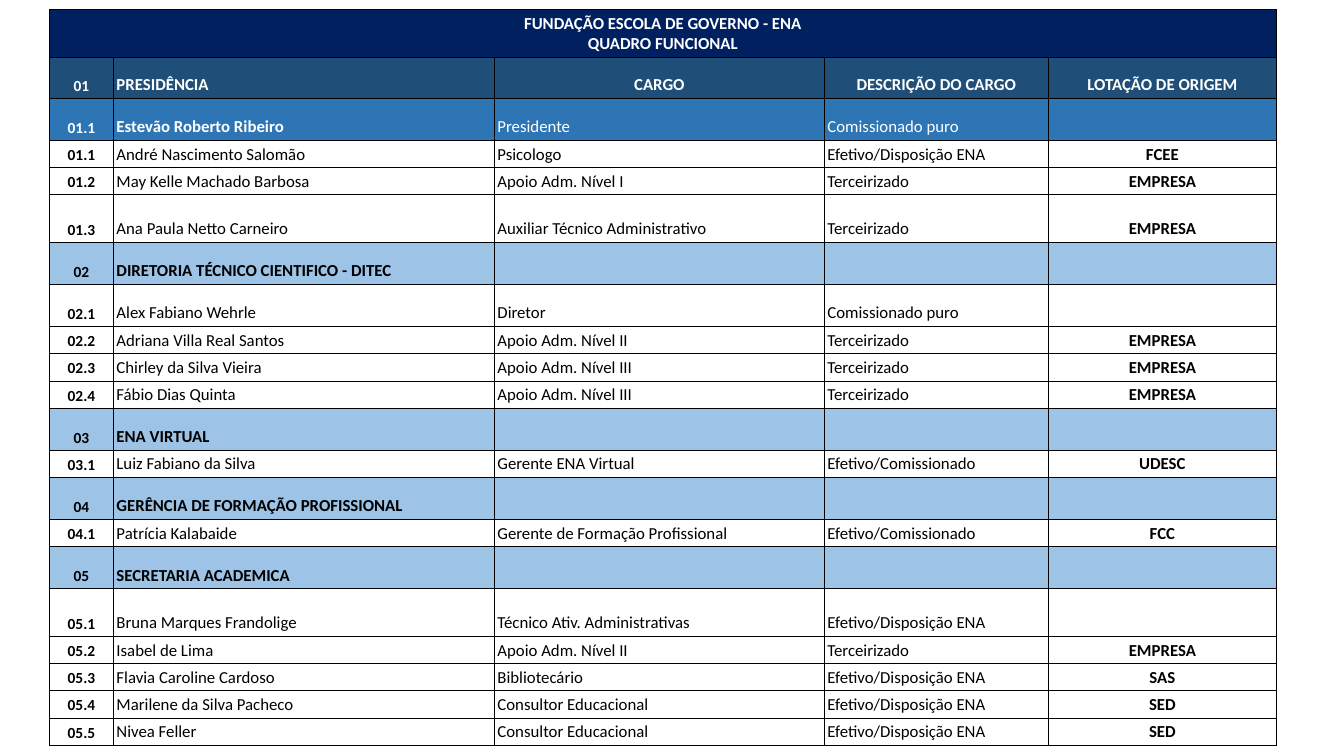
from dataclasses import dataclass

from lxml.etree import SubElement
from pptx import Presentation
from pptx.dml.color import RGBColor
from pptx.enum.text import MSO_ANCHOR, PP_ALIGN
from pptx.oxml.ns import qn
from pptx.util import Pt


@dataclass(frozen=True)
class Theme:
    font: str = "Calibri"
    text_size: float = 12
    number_size: float = 11
    black: str = "000000"
    white: str = "FFFFFF"
    navy: str = "002060"
    dark_blue: str = "1F4E79"
    blue: str = "2E75B6"
    light_blue: str = "9DC3E6"
    border_width: float = 0.75
    margin: float = 2.16


@dataclass(frozen=True)
class RowStyle:
    fill: str
    color: str
    height: float
    bold_columns: tuple
    centered_columns: tuple = (0, 4)


THEME = Theme()
TITLE = RowStyle(THEME.navy, THEME.white, 34.5, (0,), (0,))
HEADER = RowStyle(THEME.dark_blue, THEME.white, 29, (0, 1, 2, 3, 4), (0, 2, 3, 4))
LEADER = RowStyle(THEME.blue, THEME.white, 30, (0, 1))
SECTION = RowStyle(THEME.light_blue, THEME.black, 30, (0, 1))
PERSON = RowStyle(THEME.white, THEME.black, 19.5, (0, 4))
MEDIUM_PERSON = RowStyle(THEME.white, THEME.black, 30, (0, 4))
TALL_PERSON = RowStyle(THEME.white, THEME.black, 34, (0, 4))

TABLE_LEFT, TABLE_TOP = 35.36, 6.8
COLUMN_WIDTHS = (45.71, 272.14, 235.71, 160, 162.86)
STAFF_ROWS = (
    (TITLE, "FUNDAÇÃO ESCOLA DE GOVERNO - ENA\nQUADRO FUNCIONAL"),
    (HEADER, "01", "PRESIDÊNCIA", "CARGO", "DESCRIÇÃO DO CARGO", "LOTAÇÃO DE ORIGEM"),
    (LEADER, "01.1", "Estevão Roberto Ribeiro", "Presidente", "Comissionado puro"),
    (PERSON, "01.1", "André Nascimento Salomão", "Psicologo", "Efetivo/Disposição ENA", "FCEE"),
    (PERSON, "01.2", "May Kelle Machado Barbosa", "Apoio Adm. Nível I", "Terceirizado", "EMPRESA"),
    (TALL_PERSON, "01.3", "Ana Paula Netto Carneiro", "Auxiliar Técnico Administrativo",
     "Terceirizado", "EMPRESA"),
    (SECTION, "02", "DIRETORIA TÉCNICO CIENTIFICO - DITEC"),
    (MEDIUM_PERSON, "02.1", "Alex Fabiano Wehrle", "Diretor", "Comissionado puro"),
    (PERSON, "02.2", "Adriana Villa Real Santos", "Apoio Adm. Nível II", "Terceirizado", "EMPRESA"),
    (PERSON, "02.3", "Chirley da Silva Vieira", "Apoio Adm. Nível III", "Terceirizado", "EMPRESA"),
    (PERSON, "02.4", "Fábio Dias Quinta", "Apoio Adm. Nível III", "Terceirizado", "EMPRESA"),
    (SECTION, "03", "ENA VIRTUAL"),
    (PERSON, "03.1", "Luiz Fabiano da Silva", "Gerente ENA Virtual", "Efetivo/Comissionado", "UDESC"),
    (SECTION, "04", "GERÊNCIA DE FORMAÇÃO PROFISSIONAL"),
    (PERSON, "04.1", "Patrícia Kalabaide", "Gerente de Formação Profissional",
     "Efetivo/Comissionado", "FCC"),
    (SECTION, "05", "SECRETARIA ACADEMICA"),
    (TALL_PERSON, "05.1", "Bruna Marques Frandolige", "Técnico Ativ. Administrativas",
     "Efetivo/Disposição ENA"),
    (PERSON, "05.2", "Isabel de Lima", "Apoio Adm. Nível II", "Terceirizado", "EMPRESA"),
    (PERSON, "05.3", "Flavia Caroline Cardoso", "Bibliotecário", "Efetivo/Disposição ENA", "SAS"),
    (PERSON, "05.4", "Marilene da Silva Pacheco", "Consultor Educacional",
     "Efetivo/Disposição ENA", "SED"),
    (PERSON, "05.5", "Nivea Feller", "Consultor Educacional", "Efetivo/Disposição ENA", "SED"),
)


def add_borders(cell):
    properties = cell._tc.get_or_add_tcPr()
    for side in ("a:lnL", "a:lnR", "a:lnT", "a:lnB"):
        line = SubElement(properties, qn(side), w=str(Pt(THEME.border_width)))
        fill = SubElement(line, qn("a:solidFill"))
        SubElement(fill, qn("a:srgbClr"), val=THEME.black)


def format_cell(cell, style):
    add_borders(cell)
    cell.fill.solid()
    cell.fill.fore_color.rgb = RGBColor.from_string(style.fill)
    cell.margin_left = cell.margin_right = Pt(THEME.margin)
    cell.margin_top = cell.margin_bottom = Pt(THEME.margin)
    cell.vertical_anchor = MSO_ANCHOR.MIDDLE if style is TITLE else MSO_ANCHOR.BOTTOM


def write_cell(cell, text, style, column):
    is_number = column == 0 and style is not TITLE
    cell.text_frame.text = text
    for paragraph in cell.text_frame.paragraphs:
        paragraph.alignment = PP_ALIGN.CENTER if column in style.centered_columns else PP_ALIGN.LEFT
        for run in paragraph.runs:
            run.font.name = THEME.font
            run.font.size = Pt(THEME.number_size if is_number else THEME.text_size)
            run.font.bold = column in style.bold_columns
            run.font.color.rgb = RGBColor.from_string(style.color)


def add_staff_table(slide):
    height = sum(style.height for style, *texts in STAFF_ROWS)
    shape = slide.shapes.add_table(
        len(STAFF_ROWS), len(COLUMN_WIDTHS), Pt(TABLE_LEFT), Pt(TABLE_TOP),
        Pt(sum(COLUMN_WIDTHS)), Pt(height))
    table = shape.table
    table.first_row = table.horz_banding = False
    for column, width in zip(table.columns, COLUMN_WIDTHS):
        column.width = Pt(width)
    for row, (style, *texts) in zip(table.rows, STAFF_ROWS):
        row.height = Pt(style.height)
        for cell in row.cells:
            format_cell(cell, style)
        for column, text in enumerate(texts):
            write_cell(row.cells[column], text, style, column)
    table.cell(0, 0).merge(table.cell(0, len(COLUMN_WIDTHS) - 1))


def main():
    presentation = Presentation()
    presentation.slide_width = Pt(960)
    presentation.slide_height = Pt(540)
    slide = presentation.slides.add_slide(presentation.slide_layouts[6])
    add_staff_table(slide)
    presentation.save("out.pptx")


if __name__ == "__main__":
    main()
